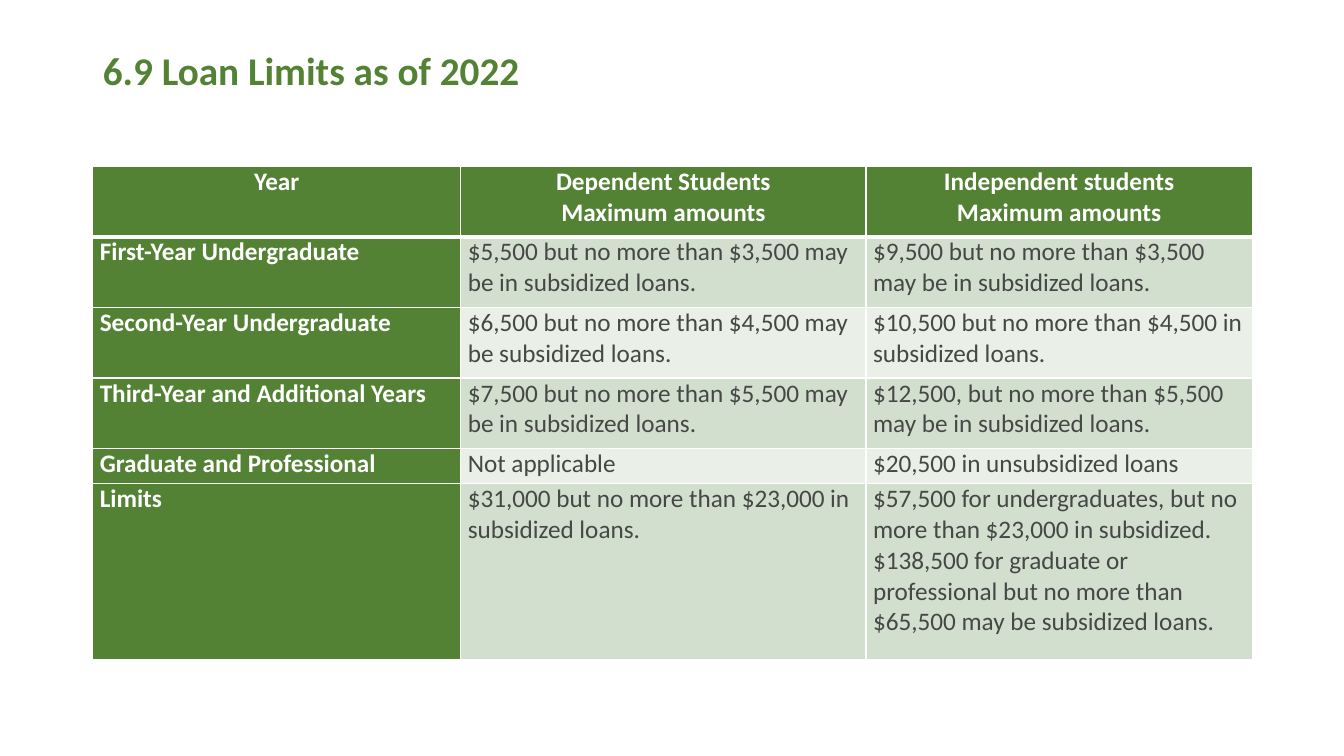
from dataclasses import dataclass

from lxml.etree import SubElement
from pptx import Presentation
from pptx.dml.color import RGBColor
from pptx.enum.text import MSO_ANCHOR, PP_ALIGN
from pptx.oxml.ns import qn
from pptx.util import Inches, Pt

TITLE = "6.9 Loan Limits as of 2022"
LOAN_LIMITS = [
    ("Year", "Dependent Students\nMaximum amounts", "Independent students\nMaximum amounts"),
    ("First-Year Undergraduate",
     "$5,500 but no more than $3,500 may be in subsidized loans.",
     "$9,500 but no more than $3,500 may be in subsidized loans."),
    ("Second-Year Undergraduate",
     "$6,500 but no more than $4,500 may be subsidized loans.",
     "$10,500 but no more than $4,500 in subsidized loans."),
    ("Third-Year and Additional Years",
     "$7,500 but no more than $5,500 may be in subsidized loans.",
     "$12,500, but no more than $5,500 may be in subsidized loans."),
    ("Graduate and Professional", "Not applicable", "$20,500 in unsubsidized loans"),
    ("Limits",
     "$31,000 but no more than $23,000 in subsidized loans.",
     "$57,500 for undergraduates, but no more than $23,000 in subsidized.\n"
     "$138,500 for graduate or professional but no more than $65,500 may be subsidized loans."),
]
COLUMN_WIDTHS = [3.65, 4.02, 3.83]
ROW_HEIGHTS = [0.7, 0.7, 0.7, 0.7, 0.35, 1.74]


@dataclass(frozen=True)
class Theme:
    font: str = "Calibri"
    green: str = "548235"
    white: str = "FFFFFF"
    text: str = "464846"
    bands: tuple = ("EAEFE8", "D2DECE")
    title_size: int = 28
    table_size: int = 18


THEME = Theme()


def set_attributes(target, values):
    for name, value in values.items():
        setattr(target, name, value)


def format_font(font, size, color, bold):
    set_attributes(font, {"name": THEME.font, "size": Pt(size), "bold": bold})
    font.color.rgb = RGBColor.from_string(color)


def add_borders(cell, widths):
    """Draw white borders; widths maps the sides L, R, T, B, in that order, to points."""
    properties = cell._tc.get_or_add_tcPr()
    for side, width in widths.items():
        line = SubElement(properties, qn(f"a:ln{side}"), w=str(Pt(width)))
        fill = SubElement(line, qn("a:solidFill"))
        SubElement(fill, qn("a:srgbClr"), val=THEME.white)


def format_cell(cell, text, row, column):
    is_header = row == 0 or column == 0
    cell.text = text
    set_attributes(cell, {
        "margin_left": Inches(0.07), "margin_right": Inches(0.07),
        "margin_top": 0, "margin_bottom": 0, "vertical_anchor": MSO_ANCHOR.TOP,
    })
    add_borders(cell, {"L": 1, "R": 1, "T": 3 if row == 1 else 1, "B": 3 if row == 0 else 1})
    cell.fill.solid()
    cell.fill.fore_color.rgb = RGBColor.from_string(
        THEME.green if is_header else THEME.bands[row % 2])
    for paragraph in cell.text_frame.paragraphs:
        paragraph.alignment = PP_ALIGN.CENTER if row == 0 else PP_ALIGN.LEFT
        format_font(paragraph.font, THEME.table_size,
                    THEME.white if is_header else THEME.text, is_header)


def add_title(slide):
    title = slide.shapes.title
    set_attributes(title, {"left": Inches(0.92), "top": Inches(0.47),
                           "width": Inches(9.8), "height": Inches(0.5)})
    frame = title.text_frame
    frame.text = TITLE
    set_attributes(frame, {"vertical_anchor": MSO_ANCHOR.MIDDLE, "word_wrap": True})
    paragraph = frame.paragraphs[0]
    set_attributes(paragraph, {"alignment": PP_ALIGN.LEFT, "line_spacing": 0.9})
    format_font(paragraph.font, THEME.title_size, THEME.green, True)


def add_loan_table(slide):
    table = slide.shapes.add_table(
        len(ROW_HEIGHTS), len(COLUMN_WIDTHS), Inches(0.92), Inches(1.65),
        Inches(sum(COLUMN_WIDTHS)), Inches(sum(ROW_HEIGHTS))).table
    for column, width in zip(table.columns, COLUMN_WIDTHS):
        column.width = Inches(width)
    for row, height in zip(table.rows, ROW_HEIGHTS):
        row.height = Inches(height)
    for row, texts in enumerate(LOAN_LIMITS):
        for column, text in enumerate(texts):
            format_cell(table.cell(row, column), text, row, column)


def main():
    presentation = Presentation()
    set_attributes(presentation, {"slide_width": Inches(13.33), "slide_height": Inches(7.5)})
    slide = presentation.slides.add_slide(presentation.slide_layouts.get_by_name("Title Only"))
    add_title(slide)
    add_loan_table(slide)
    presentation.save("out.pptx")


if __name__ == "__main__":
    main()
